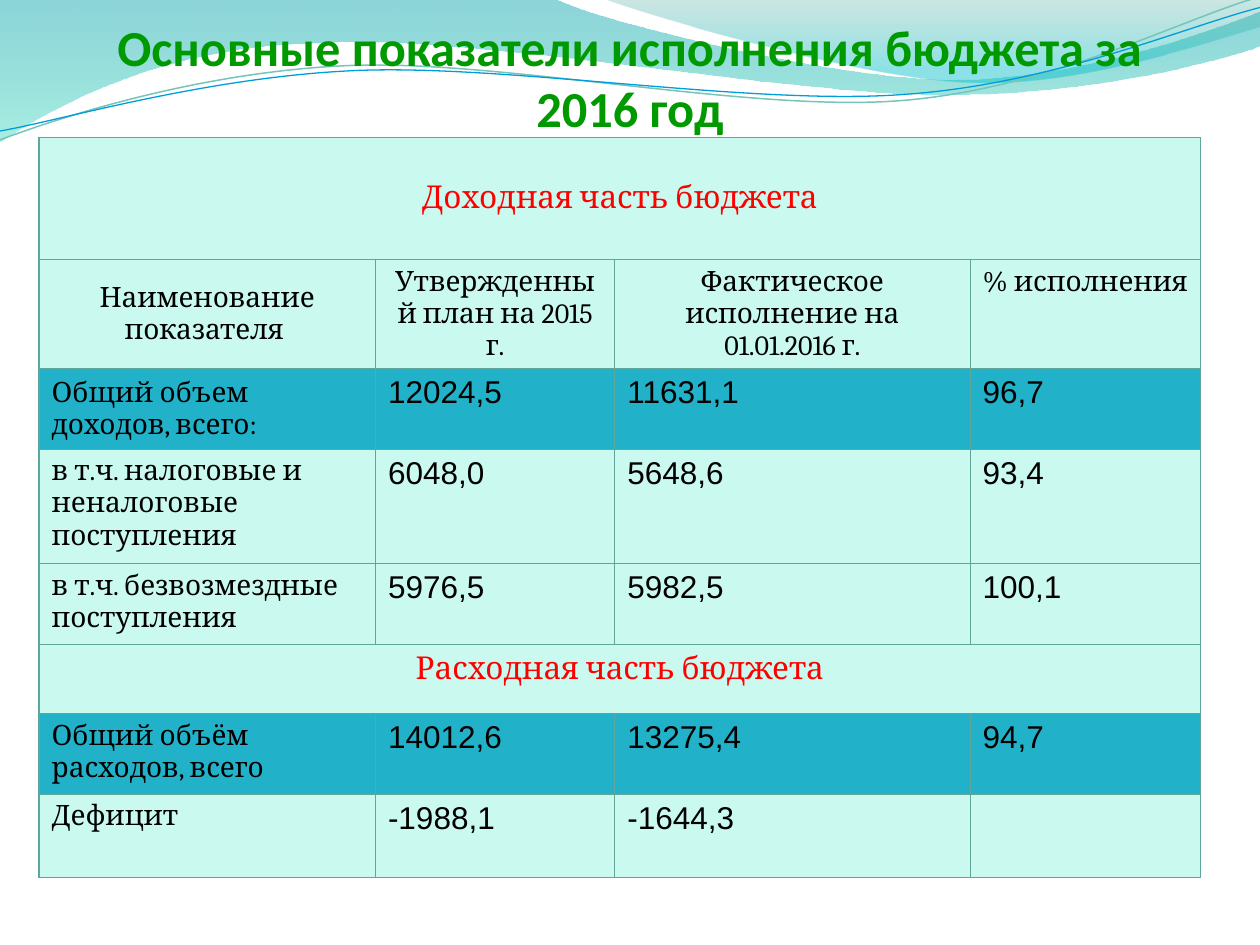
import math

import pptx
import pptx.util
import pptx.dml.color
import pptx.enum.text
import pptx.oxml
import pptx.oxml.ns

Inches = pptx.util.Inches
Pt = pptx.util.Pt
ALIGN = pptx.enum.text.PP_ALIGN
ANCHOR = pptx.enum.text.MSO_ANCHOR
qn = pptx.oxml.ns.qn
NAMESPACE = pptx.oxml.ns.nsdecls("a")

COLORS = {
    "title": "009900", "heading": "FF0000", "text": "000000",
    "cell": "CAFAEF", "total": "21B2C9", "border": "61A69B",
    "teal": "00A1A9", "mint": "62E1CC", "sage": "58AFA1", "aqua": "00C0C9",
    "pale line": "75C5B8", "blue line": "009DD9",
}

# Waves: a start point, then points (2 numbers) or Bezier curves (6 numbers)
BROAD_WAVE = [(0, 0), (4.4, -0.01), (4.76, 0.17, 6.64, 0.63, 7.58, 0.63),
              (8.53, 0.63, 9.58, 0.26, 10, 0.09), (10.01, 0.36),
              (9.83, 0.44, 8.7, 0.76, 7.46, 0.75),
              (6.22, 0.75, 3.82, 0.28, 2.57, 0.34),
              (1.29, 0.36, 0.46, 0.83, -0.01, 1.13), (0, 0)]
RIGHT_WAVE = [(4.79, -0.01), (5.09, 0.11, 6.82, 0.62, 7.69, 0.65),
              (8.56, 0.69, 9.61, 0.32, 10, 0.21), (10, 0), (4.79, -0.01)]
PALE_LINE = [(0, 1.11), (0.48, 0.93, 1.58, 0.57, 2.77, 0.52),
             (3.95, 0.47, 5.93, 0.89, 7.13, 0.8),
             (8.33, 0.71, 9.38, 0.15, 9.98, -0.02)]
BLUE_LINE = [(0, 1.04), (0.47, 0.96, 1.64, 0.61, 2.83, 0.56),
             (4.03, 0.51, 5.97, 0.84, 7.17, 0.75),
             (8.36, 0.67, 9.41, 0.21, 10, 0.06)]
LINE_TILT = 357.3

COLUMN_WIDTHS = [2.67, 1.9, 2.82, 1.83]
ROW_HEIGHTS = [0.97, 0.86, 0.64, 0.91, 0.64, 0.55, 0.64, 0.66]
ROWS = [
    ["Доходная часть бюджета"],
    ["Наименование показателя ", "Утвержденный план на 2015 г.",
     "Фактическое исполнение на 01.01.2016 г.", "% исполнения"],
    ["Общий объем доходов, всего:", "12024,5", "11631,1", "96,7"],
    ["в т.ч. налоговые и неналоговые поступления", "6048,0", "5648,6", "93,4"],
    ["в т.ч. безвозмездные поступления", "5976,5", "5982,5", "100,1"],
    ["Расходная часть бюджета"],
    ["Общий объём расходов, всего", "14012,6", "13275,4", "94,7"],
    ["Дефицит", "-1988,1", "-1644,3", ""],
]
HEADER_ROW = 1
TOTAL_ROWS = (2, 6)
MIDDLE_CELLS = [(0, 0), (1, 0), (2, 0)]


def rgb(name):
    return pptx.dml.color.RGBColor.from_string(COLORS[name])


def write_text(frame, text, size=16, font="Cambria", color="text",
               bold=False, align=ALIGN.LEFT):
    para = frame.paragraphs[0]
    para.alignment = align
    if not text:
        return
    span = para.add_run()
    span.text = text
    span.font.size = Pt(size)
    span.font.name = font
    span.font.bold = bold
    span.font.color.rgb = rgb(color)


def turn(point, center, degrees):
    angle = math.radians(degrees)
    dx, dy = point[0] - center[0], point[1] - center[1]
    return (center[0] + dx * math.cos(angle) - dy * math.sin(angle),
            center[1] + dx * math.sin(angle) + dy * math.cos(angle))


def add_outline(page, steps, closed=False, center=(0, 0), tilt=0):
    """Freeform through all points, its line segments then joined into curves."""
    points = [turn(step[i:i + 2], center, -tilt)
              for step in steps for i in range(0, len(step), 2)]
    points = [(Inches(x), Inches(y)) for x, y in points]
    builder = page.shapes.build_freeform(*points[0])
    builder.add_line_segments(points[1:], close=closed)
    shape = builder.convert_to_shape()
    shape.shadow.inherit = False
    shape.rotation = tilt
    segments = iter(list(shape._element.iter(qn("a:lnTo"))))
    for step in steps[1:]:
        parts = [next(segments) for _ in range(len(step) // 2)]
        if len(parts) == 3:
            curve = pptx.oxml.parse_xml(f"<a:cubicBezTo {NAMESPACE}/>")
            parts[0].addprevious(curve)
            for part in parts:
                curve.append(part[0])
                part.getparent().remove(part)
    return shape


def add_wave(page, steps, stops):
    """Closed wave; stops are (position, colour, opacity in percent)."""
    shape = add_outline(page, steps, closed=True)
    shape.line.fill.background()
    shape.fill.gradient()
    shape.fill.gradient_angle = 270
    for stop, (position, color, _) in zip(shape.fill.gradient_stops, stops):
        stop.position = position
        stop.color.rgb = rgb(color)
    elements = shape._element.spPr.iter(qn("a:srgbClr"))
    for element, (_, _, opacity) in zip(elements, stops):
        element.append(pptx.oxml.parse_xml(
            f'<a:alpha {NAMESPACE} val="{opacity * 1000}"/>'))


def add_wave_line(page, steps, center, color, width):
    shape = add_outline(page, steps, center=center, tilt=LINE_TILT)
    shape.fill.background()
    shape.line.color.rgb = rgb(color)
    shape.line.width = Pt(width)


def add_borders(cell, color, width):
    properties = cell._tc.get_or_add_tcPr()
    for index, side in enumerate(("lnL", "lnR", "lnT", "lnB")):
        properties.insert(index, pptx.oxml.parse_xml(
            f'<a:{side} {NAMESPACE} w="{Pt(width)}"><a:solidFill>'
            f'<a:srgbClr val="{COLORS[color]}"/></a:solidFill></a:{side}>'))


def cell_format(row, column):
    if len(ROWS[row]) == 1:
        return dict(size=18, color="heading", align=ALIGN.CENTER)
    if row == HEADER_ROW:
        return dict(align=ALIGN.CENTER)
    return dict(size=18, font="Arial") if column else {}


def add_budget_table(page):
    table = page.shapes.add_table(
        len(ROWS), len(COLUMN_WIDTHS), Inches(0.31), Inches(1.09),
        Inches(sum(COLUMN_WIDTHS)), Inches(sum(ROW_HEIGHTS))).table
    for column, width in zip(table.columns, COLUMN_WIDTHS):
        column.width = Inches(width)
    for r, (texts, height) in enumerate(zip(ROWS, ROW_HEIGHTS)):
        table.rows[r].height = Inches(height)
        for c in range(len(COLUMN_WIDTHS)):
            cell = table.cell(r, c)
            cell.fill.solid()
            cell.fill.fore_color.rgb = rgb("total" if r in TOTAL_ROWS else "cell")
            add_borders(cell, "border", 0.75)
            if (r, c) in MIDDLE_CELLS:
                cell.vertical_anchor = ANCHOR.MIDDLE
        if len(texts) == 1:
            table.cell(r, 0).merge(table.cell(r, len(COLUMN_WIDTHS) - 1))
        for c, text in enumerate(texts):
            write_text(table.cell(r, c).text_frame, text, **cell_format(r, c))


def set_title(page, text):
    title = page.shapes.title
    title.left, title.top = Inches(0.5), Inches(0.23)
    title.width, title.height = Inches(9), Inches(0.86)
    frame = title.text_frame
    frame.word_wrap = True
    frame.auto_size = pptx.enum.text.MSO_AUTO_SIZE.NONE
    frame.vertical_anchor = ANCHOR.BOTTOM
    frame.margin_left = frame.margin_right = frame.margin_bottom = 0
    frame.margin_top = Inches(0.05)
    write_text(frame, text, size=28.8, font="Calibri", color="title",
               bold=True, align=ALIGN.CENTER)
    # Bring the title in front of the waves
    page.shapes._spTree.append(title._element)


def main():
    deck = pptx.Presentation()
    deck.slide_width, deck.slide_height = Inches(10), Inches(7.5)
    page = deck.slides.add_slide(deck.slide_layouts[5])
    # Background waves
    add_wave(page, BROAD_WAVE, [(0, "teal", 45), (1, "mint", 55)])
    add_wave(page, RIGHT_WAVE, [(0, "sage", 30), (0.8, "aqua", 45)])
    add_wave_line(page, PALE_LINE, (4.99, 0.58), "pale line", 0.85)
    add_wave_line(page, BLUE_LINE, (5, 0.59), "blue line", 0.75)
    # Title and table
    set_title(page, "Основные показатели исполнения бюджета за 2016 год")
    add_budget_table(page)
    deck.save("out.pptx")


if __name__ == "__main__":
    main()
